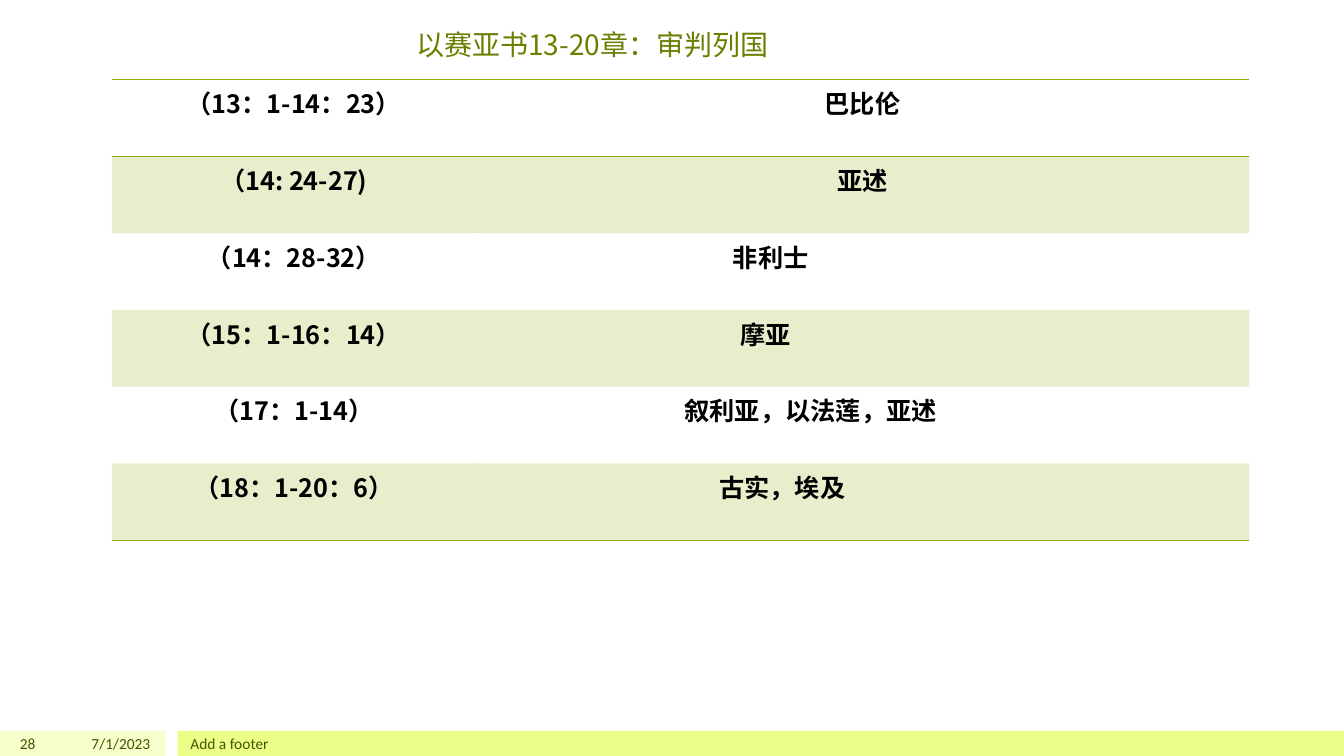
from lxml import etree
from pptx import Presentation
from pptx.dml.color import RGBColor
from pptx.enum.shapes import MSO_SHAPE
from pptx.enum.text import MSO_ANCHOR, PP_ALIGN
from pptx.oxml.ns import qn
from pptx.util import Inches, Pt

LEFT, CENTER, RIGHT = PP_ALIGN.LEFT, PP_ALIGN.CENTER, PP_ALIGN.RIGHT
MIDDLE, BOTTOM = MSO_ANCHOR.MIDDLE, MSO_ANCHOR.BOTTOM
RECTANGLE = MSO_SHAPE.RECTANGLE

OLIVE = RGBColor(0x68, 0x80, 0x00)
GREEN = RGBColor(0x8B, 0xAA, 0x00)
DARK_OLIVE = RGBColor(0x45, 0x55, 0x00)
PALE_LIME = RGBColor(0xF6, 0xFF, 0xCC)
LIME = RGBColor(0xE9, 0xFF, 0x88)
BLACK = RGBColor(0, 0, 0)

HAN_FONT = "Noto Sans CJK SC"
PLAIN_STYLE = "{2D5ABB26-0587-4C30-8999-92F81FD0307C}"
COLUMN_WIDTHS = (3.61, 7.67)

# Passage, nation, and extra right margin that shifts the nation leftwards
JUDGMENTS = [
    ("（13：1-14：23）", "巴比伦", 0),
    ("（14: 24-27)", "亚述", 0),
    ("（14：28-32）", "非利士", 1.82),
    ("（15：1-16：14）", "摩亚", 1.92),
    ("（17：1-14）", "叙利亚，以法莲，亚述", 1.03),
    ("（18：1-20：6）", "古实，埃及", 1.59),
]


def write(frame, text, size, color, align, font=HAN_FONT, bold=False):
    frame.text = text
    para = frame.paragraphs[0]
    para.alignment = align
    span = para.runs[0]
    span.font.size = Pt(size)
    span.font.bold = bold
    span.font.color.rgb = color
    span.font.name = font
    latin = span.font._element.find(qn("a:latin"))
    east_asian = etree.Element(qn("a:ea"), typeface=font)
    latin.addnext(east_asian)


def add_title(page, left, top, width, height):
    title = page.shapes.title
    title.left, title.top = Inches(left), Inches(top)
    title.width, title.height = Inches(width), Inches(height)
    write(title.text_frame, "以赛亚书13-20章：审判列国", 20, OLIVE, CENTER)
    title.text_frame.vertical_anchor = BOTTOM


def add_border(cell, side):
    line = etree.Element(qn("a:" + side), w=str(Pt(1)))
    fill = etree.SubElement(line, qn("a:solidFill"))
    etree.SubElement(fill, qn("a:srgbClr"), val=str(GREEN))
    cell._tc.get_or_add_tcPr().insert(0, line)


def tint(cell):
    cell.fill.solid()
    cell.fill.fore_color.rgb = GREEN
    color = cell._tc.tcPr.find(".//" + qn("a:srgbClr"))
    etree.SubElement(color, qn("a:alpha"), val="20000")


def add_judgments(page, left, top, width, height):
    last = len(JUDGMENTS) - 1
    frame = page.shapes.add_table(len(JUDGMENTS), 2, Inches(left), Inches(top),
                                  Inches(width), Inches(height))
    table = frame.table
    table.first_row = table.horz_banding = False
    table._tbl.tblPr.find(qn("a:tableStyleId")).text = PLAIN_STYLE
    for column, column_width in zip(table.columns, COLUMN_WIDTHS):
        column.width = Inches(column_width)

    for index, (passage, nation, shift) in enumerate(JUDGMENTS):
        for cell, text in zip(table.rows[index].cells, (passage, nation)):
            write(cell.text_frame, text, 18, BLACK, CENTER, bold=True)
            if index % 2:
                tint(cell)
            else:
                cell.fill.background()
            # Rules frame the first row and close the table
            if index in (0, last):
                add_border(cell, "lnB")
            if index == 0:
                add_border(cell, "lnT")
        table.cell(index, 1).margin_right = Inches(0.1 + shift)


def add_footer(page, left, top, width, height):
    # Coloured bars
    gap_start, gap_end = 1.64, 1.76
    for start, end, color in ((0, gap_start, PALE_LIME), (gap_end, width, LIME)):
        bar = page.shapes.add_shape(RECTANGLE, Inches(left + start), Inches(top),
                                    Inches(end - start), Inches(height))
        bar.shadow.inherit = False
        bar.fill.solid()
        bar.fill.fore_color.rgb = color
        bar.line.fill.background()

    # Page number, date and footer text
    for text, start, box_width, align in (("28", 0, 0.45, RIGHT),
                                          ("7/1/2023", 0.5, 1.09, RIGHT),
                                          ("Add a footer", 1.79, 10, LEFT)):
        box = page.shapes.add_textbox(Inches(left + start), Inches(top),
                                      Inches(box_width), Inches(height))
        box.text_frame.word_wrap = True
        box.text_frame.vertical_anchor = MIDDLE
        write(box.text_frame, text, 11, DARK_OLIVE, align, "Calibri")


def main():
    deck = Presentation()
    deck.slide_width, deck.slide_height = Inches(13.33), Inches(7.5)
    page = deck.slides.add_slide(deck.slide_layouts[5])
    add_footer(page, 0, 7.25, 13.33, 0.25)
    add_title(page, 0.72, 0.08, 10.31, 0.58)
    add_judgments(page, 1.11, 0.79, sum(COLUMN_WIDTHS), 4.57)
    deck.save("out.pptx")


if __name__ == "__main__":
    main()
